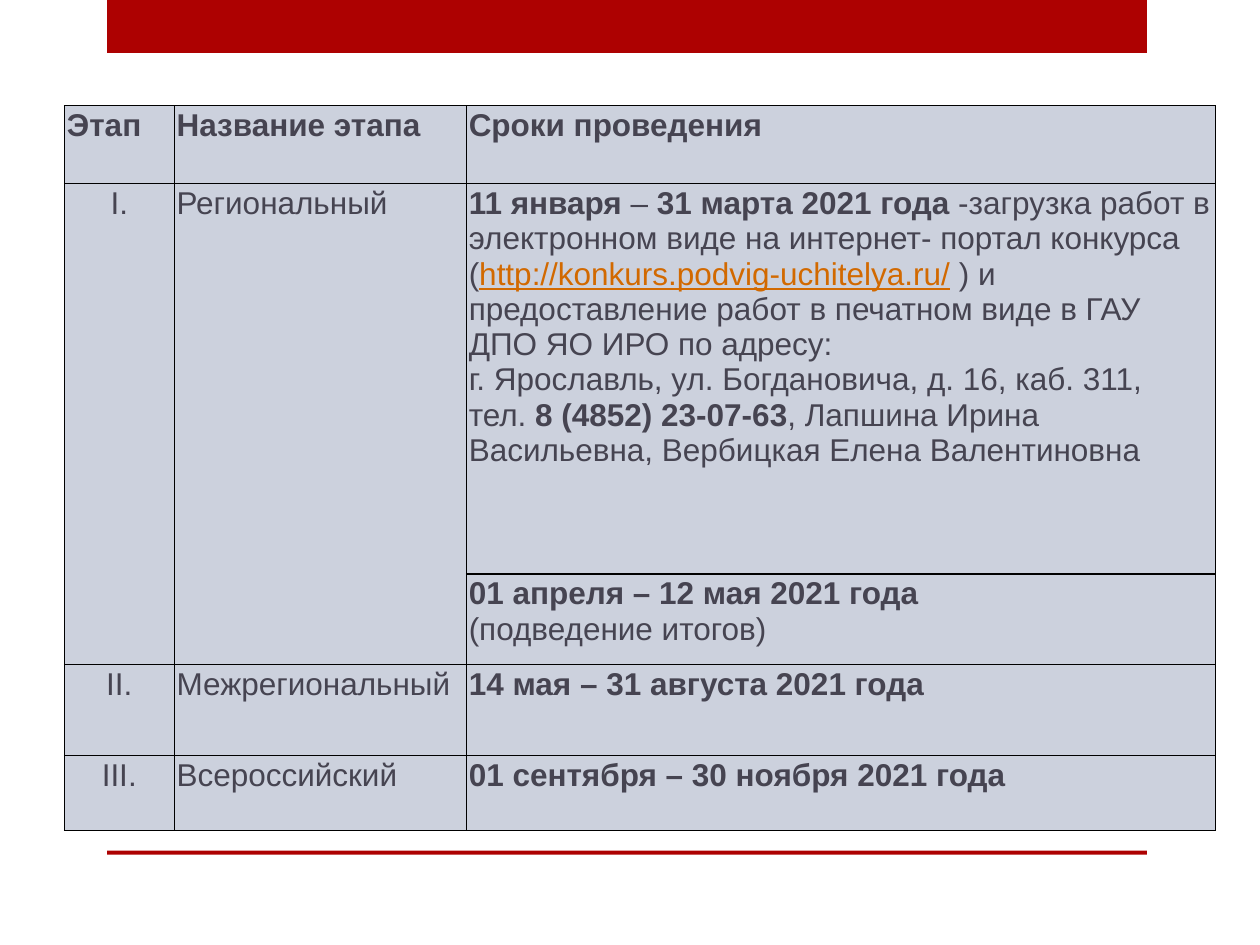
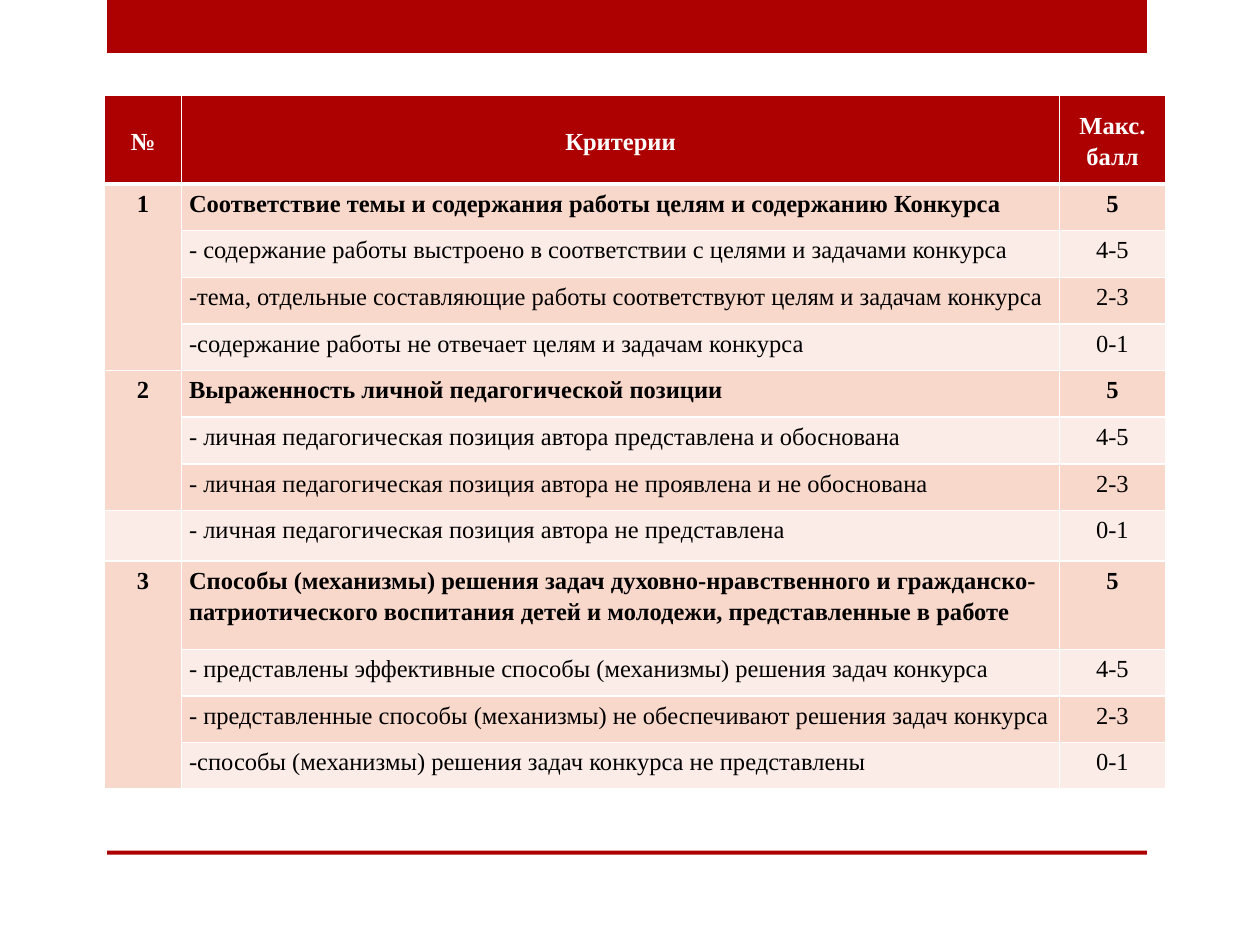
from lxml import etree
from pptx import Presentation
from pptx import util as u
from pptx.dml.color import RGBColor
from pptx.enum import shapes, text
from pptx.oxml import ns

HUES = {
    "red": "AD0101", "white": "FFFFFF", "black": "000000",
    "ink": "464451", "link": "D26900", "slate": "CCD1DD",
    "peach": "F9D8CC", "blush": "FCECE7",
}
LEFT, MID = text.PP_ALIGN.LEFT, text.PP_ALIGN.CENTER
TOP, CORE = text.MSO_ANCHOR.TOP, text.MSO_ANCHOR.MIDDLE

STAGE = {"name": "Arial", "size": u.Pt(18), "hue": "ink"}
SCORE = {"name": "Times New Roman", "size": u.Pt(14), "hue": "black"}
BOLD = {"bold": True}
LINK = {"hue": "link", "underline": True}

# A cell is a list of paragraphs, a paragraph a list of (words, look) runs.
DATES = [
    [
        [("11 января", BOLD), (" – ", {}), ("31 марта 2021 года", BOLD),
         (" -загрузка работ в электронном виде на интернет- портал конкурса (", {}),
         ("http://konkurs.podvig-uchitelya.ru/", LINK),
         (" ) и предоставление работ в печатном виде в ГАУ ДПО ЯО ИРО по адресу:", {})],
        [("г. Ярославль, ул. Богдановича, д. 16, каб. 311,", {})],
        [("тел. ", {}), ("8 (4852) 23-07-63", BOLD),
         (", Лапшина Ирина Васильевна, Вербицкая Елена Валентиновна", {})],
    ],
    [[("01 апреля – 12 мая 2021 года", BOLD)], [("(подведение итогов)", {})]],
    [[("14 мая – 31 августа 2021 года", BOLD)]],
    [[("01 сентября – 30 ноября 2021 года", BOLD)]],
]
STAGES = [("I.", "Региональный"), ("", ""), ("II.", "Межрегиональный"),
          ("III.", "Всероссийский")]

MARKS = ["5", "4-5", "2-3", "0-1"]
TESTS = [
    ["Соответствие темы и содержания работы целям и содержанию Конкурса",
     "- содержание работы выстроено в соответствии с целями и задачами конкурса",
     "-тема, отдельные составляющие работы соответствуют целям и задачам конкурса",
     "-содержание работы не отвечает целям и задачам конкурса"],
    ["Выраженность личной педагогической позиции",
     "- личная педагогическая позиция автора представлена и обоснована",
     "- личная педагогическая позиция автора не проявлена и не обоснована",
     "- личная педагогическая позиция автора не представлена"],
    ["Способы (механизмы) решения задач духовно-нравственного и гражданско- "
     "патриотического воспитания детей и молодежи, представленные в работе",
     "- представлены эффективные способы (механизмы) решения задач конкурса",
     "- представленные способы (механизмы) не обеспечивают решения задач конкурса",
     "-способы (механизмы) решения задач конкурса не представлены"],
]


def tint(hue):
    return RGBColor.from_string(HUES[hue])


def plain(words, look=None):
    """Return cell content made of one run, or nothing for no words."""
    return [[(words, look or {})]] if words else []


def write(cell, paras, base, align=LEFT, lead=None):
    frame = cell.text_frame
    for i, runs in enumerate(paras):
        para = frame.add_paragraph() if i else frame.paragraphs[0]
        para.alignment, para.line_spacing = align, lead
        for words, look in runs:
            run = para.add_run()
            run.text = words
            form = {"bold": False, **base, **look}
            run.font.color.rgb = tint(form.pop("hue"))
            for key, value in form.items():
                setattr(run.font, key, value)


def edge(cell, hue, widths):
    """Draw cell borders; widths maps sides L, R, T, B to points."""
    props = cell._tc.get_or_add_tcPr()
    for i, side in enumerate("LRTB"):
        line = etree.Element(ns.qn(f"a:ln{side}"), w=str(u.Pt(widths[side])))
        fill = etree.SubElement(line, ns.qn("a:solidFill"))
        etree.SubElement(fill, ns.qn("a:srgbClr"), val=HUES[hue])
        props.insert(i, line)


def dress(cell, fill, pad, anchor=TOP):
    cell.fill.solid()
    cell.fill.fore_color.rgb = tint(fill)
    form = {"margin_left": pad, "margin_right": pad, "margin_top": u.Cm(0.05),
            "margin_bottom": u.Cm(0.05), "vertical_anchor": anchor}
    for key, value in form.items():
        setattr(cell, key, value)


def grid(slide, left, top, cols, rows):
    """Add an unstyled table from sizes in centimetres."""
    box = [u.Cm(v) for v in (left, top, sum(cols), sum(rows))]
    table = slide.shapes.add_table(len(rows), len(cols), *box).table
    table.first_row = table.horz_banding = False
    for col, width in zip(table.columns, cols):
        col.width = u.Cm(width)
    for row, height in zip(table.rows, rows):
        row.height = u.Cm(height)
    return table


def frame_layout(layout, slide):
    """Put the top band and the foot rule on the layout, by way of a slide."""
    for top, height in ((0, 1.07), (17.15, 0.08)):
        box = [u.Cm(v) for v in (2.16, top, 20.96, height)]
        band = slide.shapes.add_shape(shapes.MSO_SHAPE.RECTANGLE, *box)
        band.shadow.inherit = False
        band.fill.solid()
        band.fill.fore_color.rgb = tint("red")
        band.line.fill.background()
        layout.shapes.element.append(band.element)


def stage_table(slide, left, top):
    table = grid(slide, left, top, [2.21, 5.89, 15.11],
                 [1.57, 7.87, 1.83, 1.83, 1.52])
    rows = [[plain(head, BOLD) for head in
             ("Этап", "Название этапа", "Сроки проведения")]]
    rows += [[plain(num), plain(name), dates]
             for (num, name), dates in zip(STAGES, DATES)]
    for r, row in enumerate(rows):
        for c, paras in enumerate(row):
            cell = table.cell(r, c)
            dress(cell, "slate", u.Cm(0.05))
            edge(cell, "black", dict.fromkeys("LRTB", 0.75))
            write(cell, paras, STAGE, MID if r and c == 0 else LEFT)
    for c in (0, 1):
        table.cell(1, c).merge(table.cell(2, c))


def score_table(slide, left, top):
    rows = [("№", "Критерии", "Макс. балл")]
    for num, tests in enumerate(TESTS, 1):
        for i, (test, mark) in enumerate(zip(tests, MARKS)):
            rows.append(("" if i else str(num), test, mark))
    tall = {0: 1.78, 8: 1.02, 9: 1.78}
    table = grid(slide, left, top, [1.55, 17.7, 2.13],
                 [tall.get(r, 0.94) for r in range(len(rows))])
    for r, row in enumerate(rows):
        fill = ("peach" if r % 2 else "blush") if r else "red"
        look = {"bold": r == 0 or bool(row[0])}
        if r == 0:
            look["hue"] = "white"
        for c, words in enumerate(row):
            cell = table.cell(r, c)
            dress(cell, fill, u.Cm(0.15), TOP if r else CORE)
            edge(cell, "white", {"L": 1, "R": 1, "T": 3 if r == 1 else 1,
                                 "B": 1 if r else 3})
            write(cell, plain(words, look), SCORE,
                  LEFT if r and c == 1 else MID, 1.15)
    for first, last in ((1, 4), (5, 7), (9, 12)):
        table.cell(first, 0).merge(table.cell(last, 0))


def main():
    deck = Presentation()
    deck.slide_width, deck.slide_height = u.Cm(25.4), u.Cm(19.05)
    blank = deck.slide_layouts[6]
    first, second = (deck.slides.add_slide(blank) for _ in range(2))
    frame_layout(blank, first)
    stage_table(first, 1.3, 2.13)
    score_table(second, 2.11, 1.93)
    deck.save("out.pptx")


if __name__ == "__main__":
    main()
